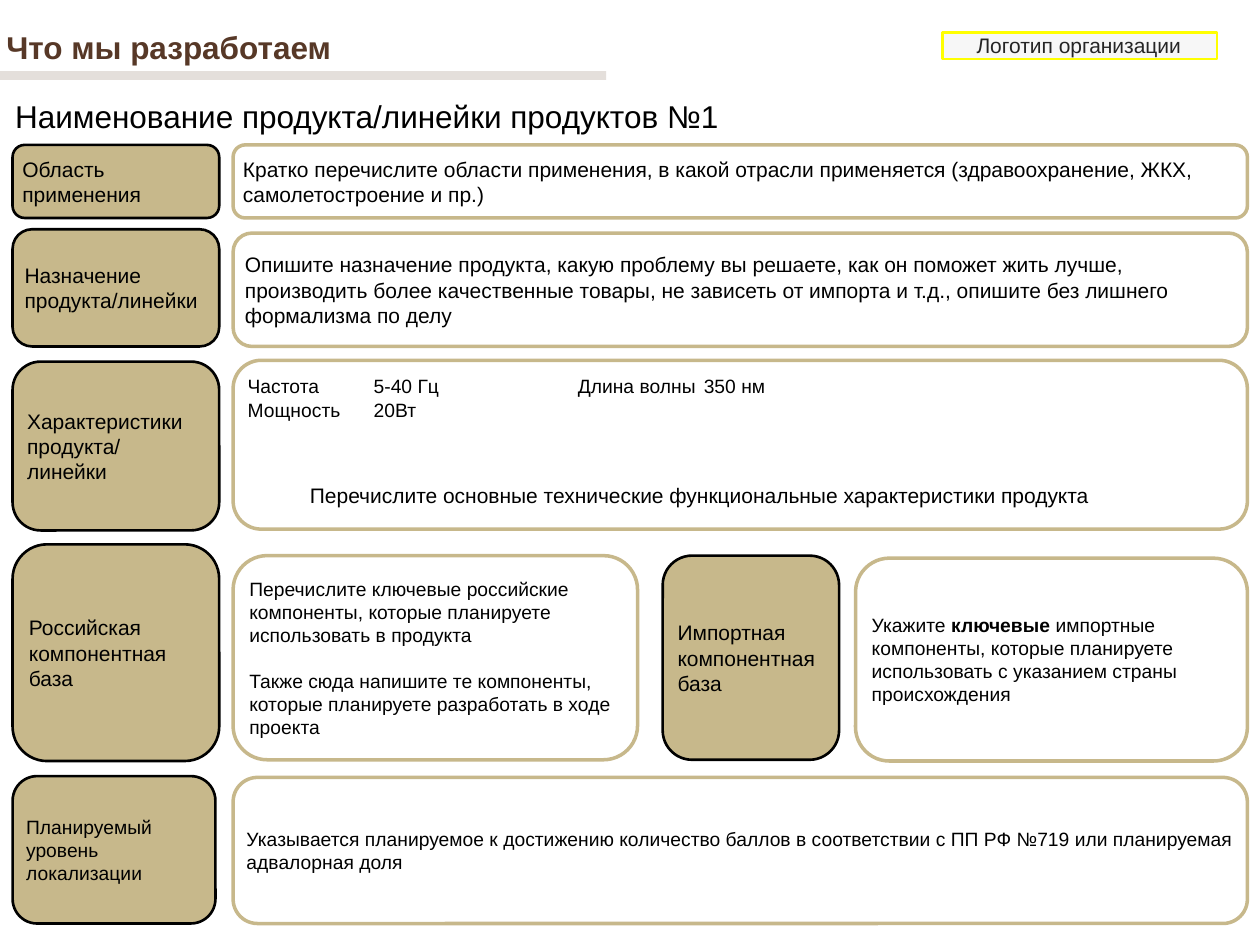
from dataclasses import dataclass
from lxml.etree import SubElement
from pptx import Presentation
from pptx.dml.color import RGBColor
from pptx.enum.shapes import MSO_CONNECTOR, MSO_SHAPE
from pptx.enum.text import MSO_ANCHOR, PP_ALIGN
from pptx.oxml.ns import qn
from pptx.util import Inches, Pt


@dataclass(frozen=True)
class Theme:
    font: str = "Arial"
    black: str = "000000"
    white: str = "FFFFFF"
    sand: str = "C7B88B"
    brown: str = "573827"
    rule: str = "A8998C"
    pale: str = "F1F1F1"
    dark: str = "252525"
    yellow: str = "FFFF00"
    head: int = 18
    body: int = 12
    small: int = 11
    pad: float = 0.05


THEME = Theme()
SIZE = (10, 7.5)
COLS = {
    "label": (0.1, 1.64),
    "wide": (1.85, 8.05),
    "local": (1.85, 3.21),
    "middle": (5.26, 1.4),
    "right": (6.79, 3.11),
    "narrow": (0.1, 1.61),
}
CARDS = [
    ("label", 1.15, 0.58, THEME.body, ["Область применения"]),
    ("wide", 1.15, 0.58, THEME.body, [
        "Кратко перечислите области применения, в какой отрасли применяется "
        "(здравоохранение, ЖКХ, самолетостроение и пр.)"]),
    ("label", 1.82, 0.93, THEME.body, ["Назначение продукта/линейки"]),
    ("wide", 1.85, 0.9, THEME.body, [
        "Опишите назначение продукта, какую проблему вы решаете, как он поможет "
        "жить лучше, производить более качественные товары, не зависеть от импорта "
        "и т.д., опишите без лишнего формализма по делу"]),
    ("label", 2.87, 1.34, THEME.body, ["Характеристики продукта/ линейки"]),
    ("label", 4.32, 1.72, THEME.body, ["Российская компонентная база"]),
    ("local", 4.41, 1.62, THEME.small, [
        "Перечислите ключевые российские компоненты, которые планируете "
        "использовать в продукта",
        "Также сюда напишите те компоненты, которые планируете разработать "
        "в ходе проекта"]),
    ("middle", 4.41, 1.62, THEME.body, ["Импортная компонентная база"]),
    ("right", 4.43, 1.61, THEME.small, [
        "Укажите *ключевые* импортные компоненты, которые планируете "
        "использовать с указанием страны происхождения"]),
    ("narrow", 6.16, 1.17, THEME.small, ["Планируемый уровень локализации"]),
    ("wide", 6.17, 1.16, THEME.small, [
        "Указывается планируемое к достижению количество баллов в соответствии "
        "с ПП РФ №719 или планируемая адвалорная доля"]),
]
LABELS = ("label", "middle", "narrow")
SPECS = ["Частота\t5-40 Гц\tДлина волны\t350 нм", "Мощность\t20Вт"]
STOPS = (1, 2.62, 3.62)


def tint(color, value, alpha=None):
    color.rgb = RGBColor.from_string(value)
    if alpha:
        node = color._xFill.find(qn("a:srgbClr"))
        SubElement(node, qn("a:alpha"), val=str(alpha * 1000))


def paint(shape, fill, line, width, alpha=None):
    shape.shadow.inherit = False
    shape.fill.solid()
    tint(shape.fill.fore_color, fill, alpha)
    shape.line.fill.solid()
    tint(shape.line.color, line)
    shape.line.width = Pt(width)


def write(shape, lines, size, color=THEME.black, bold=False,
          anchor=MSO_ANCHOR.TOP, wrap=True, pad=THEME.pad, gap=0):
    frame = shape.text_frame
    frame.word_wrap = wrap
    frame.vertical_anchor = anchor
    frame.margin_left = frame.margin_right = Inches(pad)
    frame.margin_top = frame.margin_bottom = Inches(pad)
    for index, line in enumerate(lines):
        para = frame.add_paragraph() if index else frame.paragraphs[0]
        para.alignment = PP_ALIGN.LEFT
        para.space_before = Pt(gap if index else 0)
        for turn, part in enumerate(line.split("*")):
            run = para.add_run()
            run.text = part
            run.font.name = THEME.font
            run.font.size = Pt(size)
            run.font.bold = bold or turn % 2 == 1
            tint(run.font.color, color)
    return frame


def add_title(slide):
    title = slide.shapes.title
    title.left, title.top = Inches(0), Inches(0.17)
    title.width, title.height = Inches(2.79), Inches(0.4)
    write(title, ["Что мы разработаем"], THEME.head, THEME.brown, True, wrap=False)


def add_rule(slide):
    rule = slide.shapes.add_connector(
        MSO_CONNECTOR.STRAIGHT, Inches(0), Inches(0.6), Inches(4.81), Inches(0.6))
    rule.line.fill.solid()
    tint(rule.line.color, THEME.rule, 31)
    rule.line.width = Pt(5)
    SubElement(rule._element.spPr, qn("a:effectLst"))


def add_badge(slide):
    badge = slide.shapes.add_shape(
        MSO_SHAPE.RECTANGLE, Inches(7.48), Inches(0.26), Inches(2.18), Inches(0.21))
    paint(badge, THEME.pale, THEME.yellow, 1.56, 52)
    frame = write(badge, ["Логотип организации"], THEME.body, THEME.dark, pad=0)
    frame.margin_left = Inches(0.27)
    frame.paragraphs[0].space_before = Pt(2)


def add_note(slide, left, top, width, height, text, size):
    box = slide.shapes.add_textbox(*map(Inches, (left, top, width, height)))
    write(box, [text], size, wrap=False)


def add_card(slide, col, top, height, size, lines, anchor=MSO_ANCHOR.MIDDLE, gap=13):
    left, width = COLS[col]
    card = slide.shapes.add_shape(
        MSO_SHAPE.ROUNDED_RECTANGLE, *map(Inches, (left, top, width, height)))
    if col in LABELS:
        paint(card, THEME.sand, THEME.black, 1.5)
    else:
        paint(card, THEME.white, THEME.sand, 2)
    return write(card, lines, size, anchor=anchor, gap=gap)


def add_specs(slide):
    frame = add_card(slide, "wide", 2.86, 1.34, THEME.small, SPECS, MSO_ANCHOR.TOP, 0)
    for para in frame.paragraphs:
        tabs = SubElement(para._p.get_or_add_pPr(), qn("a:tabLst"))
        for stop in STOPS:
            SubElement(tabs, qn("a:tab"), pos=str(Inches(stop)), algn="l")


def main():
    deck = Presentation()
    deck.slide_width, deck.slide_height = map(Inches, SIZE)
    slide = deck.slides.add_slide(deck.slide_layouts[5])
    add_badge(slide)
    add_title(slide)
    add_rule(slide)
    add_note(slide, 0.07, 0.72, 5.87, 0.4,
             "Наименование продукта/линейки продуктов №1", THEME.head)
    for card in CARDS:
        add_card(slide, *card)
    add_specs(slide)
    add_note(slide, 2.41, 3.78, 6.37, 0.3,
             "Перечислите основные технические функциональные характеристики продукта",
             THEME.body)
    deck.save("out.pptx")


if __name__ == "__main__":
    main()
